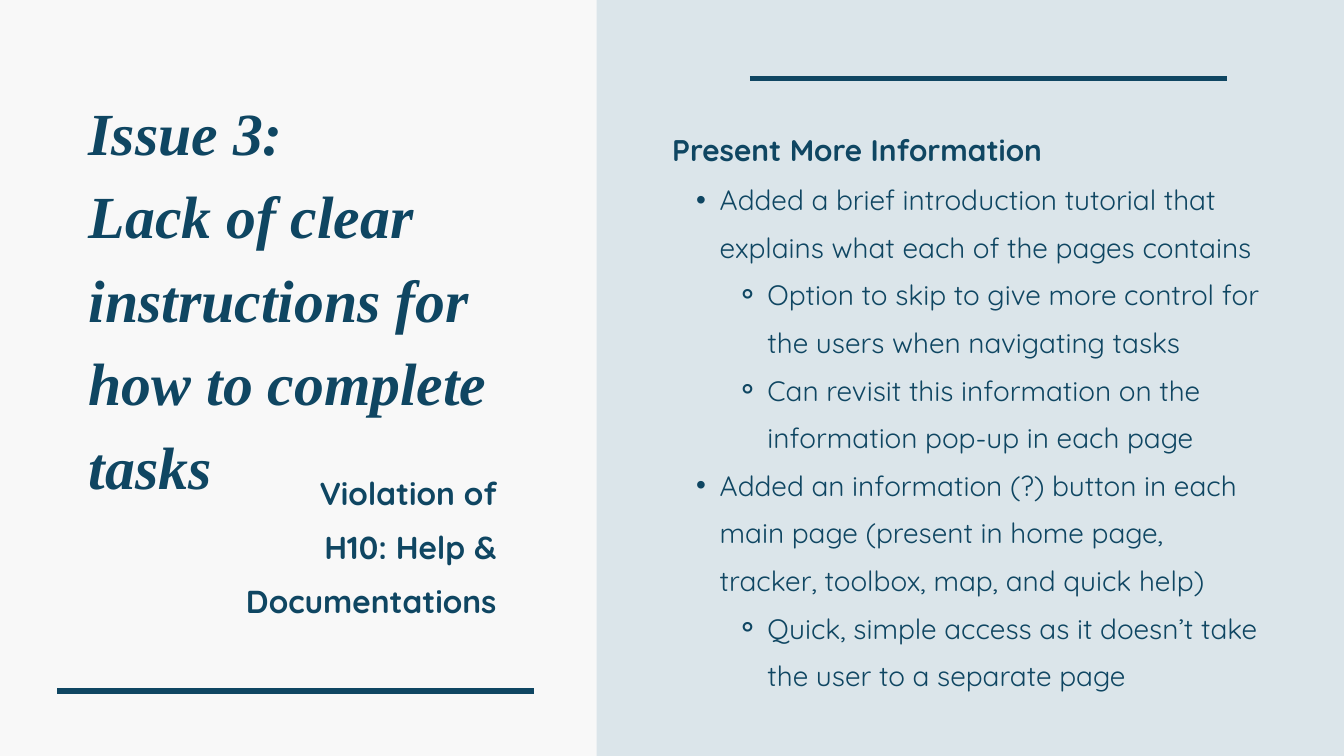
from lxml import etree
from pptx import Presentation
from pptx.dml.color import RGBColor
from pptx.enum.shapes import MSO_CONNECTOR, MSO_SHAPE
from pptx.enum.text import MSO_ANCHOR, MSO_AUTO_SIZE, PP_ALIGN
from pptx.oxml.ns import qn
from pptx.util import Inches, Pt

LEFT, RIGHT = PP_ALIGN.LEFT, PP_ALIGN.RIGHT
TOP = MSO_ANCHOR.TOP
NO_FIT = MSO_AUTO_SIZE.NONE
STRAIGHT = MSO_CONNECTOR.STRAIGHT
RECTANGLE = MSO_SHAPE.RECTANGLE

NAVY, PALE_BLUE, OFF_WHITE = "0F4662", "DBE5EA", "F8F8F8"
# level: (bullet, left margin, first-line indent)
BULLETS = {1: ("•", 0.71, -0.35), 2: ("⚬", 1.42, -0.47)}


def rgb(color):
    return RGBColor.from_string(color)


def write(sp, lines, box, size, spacing, font="Quicksand", bold=False,
          italic=False, align=LEFT):
    """Place sp at box and fill it with (level, text) lines; level 0 has no bullet."""
    sp.left, sp.top, sp.width, sp.height = [Inches(v) for v in box]
    tf = sp.text_frame
    tf.word_wrap = True
    tf.auto_size = NO_FIT
    tf.vertical_anchor = TOP
    tf.margin_left = tf.margin_top = tf.margin_right = tf.margin_bottom = 0
    for i, (level, text) in enumerate(lines):
        p = tf.add_paragraph() if i else tf.paragraphs[0]
        p.level = level
        p.alignment = align
        p.line_spacing = Pt(spacing)
        p.space_before = p.space_after = Pt(0)
        if level:
            char, margin, indent = BULLETS[level]
            pPr = p._p.get_or_add_pPr()
            pPr.set("marL", str(Inches(margin)))
            pPr.set("indent", str(Inches(indent)))
            etree.SubElement(pPr, qn("a:buFont")).set("typeface", "Arial")
            etree.SubElement(pPr, qn("a:buChar")).set("char", char)
        r = p.add_run()
        r.text = text
        r.font.name = font
        r.font.size = Pt(size)
        r.font.bold = bold
        r.font.italic = italic
        r.font.color.rgb = rgb(NAVY)


prs = Presentation()
prs.slide_width, prs.slide_height = Inches(20), Inches(11.25)
s = prs.slides.add_slide(prs.slide_layouts[5])
s.background.fill.solid()
s.background.fill.fore_color.rgb = rgb(OFF_WHITE)

# Right-hand panel
panel = s.shapes.add_shape(RECTANGLE, Inches(8.88), 0, Inches(11.12), Inches(11.25))
panel.shadow.inherit = False
panel.fill.solid()
panel.fill.fore_color.rgb = rgb(PALE_BLUE)
panel.line.fill.background()

# Accent rules
for x, y in [(0.85, 10.28), (11.16, 1.17)]:
    rule = s.shapes.add_connector(STRAIGHT, Inches(x), Inches(y), Inches(x + 7.1), Inches(y))
    rule.line.color.rgb = rgb(NAVY)
    rule.line.width = Pt(6)
    etree.SubElement(rule._element.spPr, qn("a:effectLst"))

# Title
write(s.shapes.title,
      [(0, "Issue 3:"), (0, "Lack of clear instructions for how to complete tasks")],
      (1.32, 1.24, 6.63, 4.91), 64, 89.6, font="Times New Roman", bold=True, italic=True)

# Text boxes
solution = [
    (1, "Added a brief introduction tutorial that explains what each of the pages contains"),
    (2, "Option to skip to give more control for the users when navigating tasks"),
    (2, "Can revisit this information on the information pop-up in each page"),
    (1, "Added an information (?) button in each main page (present in home page, "
        "tracker, toolbox, map, and quick help)"),
    (2, "Quick, simple access as it doesn’t take the user to a separate page"),
]
heading = [(0, "Present More Information")]
violation = [(0, "Violation of"), (0, "H10: Help & Documentations")]
for lines, box, size, spacing, bold, align in [
    (solution, (10, 2.51, 8.81, 7.75), 30, 51, False, LEFT),
    (heading, (10, 1.73, 9.41, 0.68), 32, 54.4, True, LEFT),
    (violation, (1.41, 6.81, 5.98, 2.35), 34, 57.8, True, RIGHT),
]:
    write(s.shapes.add_textbox(0, 0, 0, 0), lines, box, size, spacing, bold=bold, align=align)

prs.save("out.pptx")
